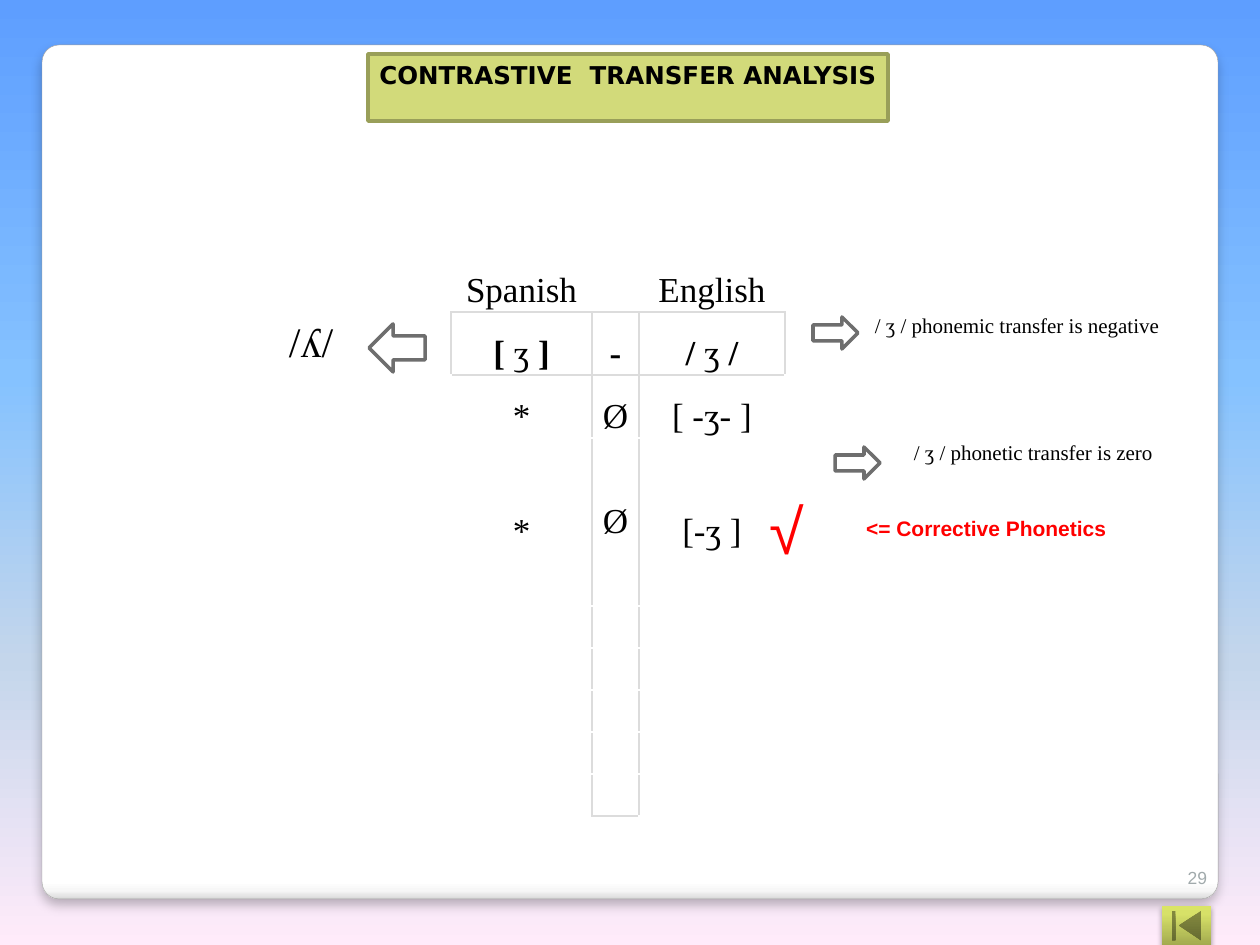
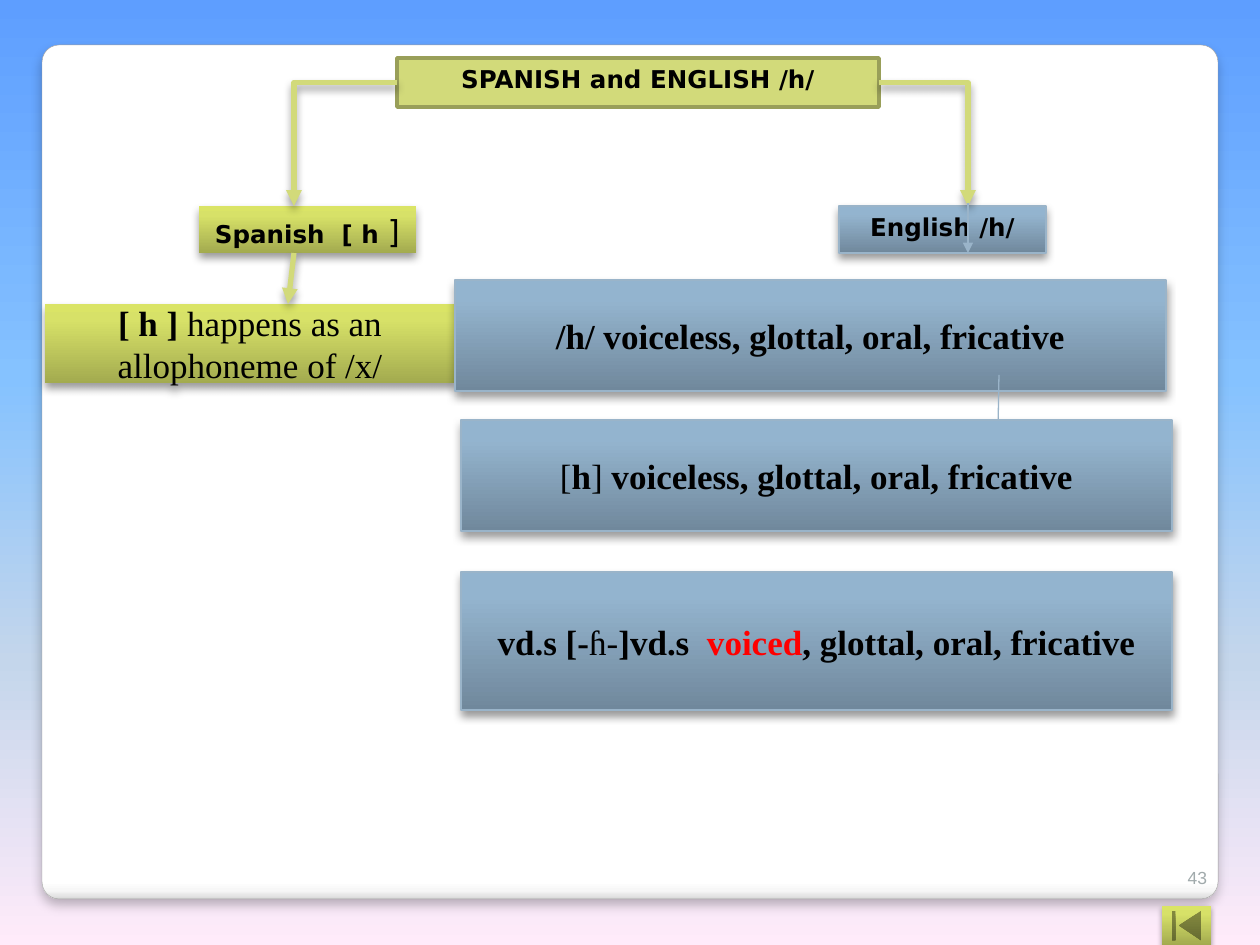
from dataclasses import dataclass
from lxml import etree
from pptx import Presentation
from pptx.dml.color import RGBColor
from pptx.enum.shapes import MSO_CONNECTOR, MSO_SHAPE
from pptx.enum.text import MSO_ANCHOR, MSO_AUTO_SIZE, PP_ALIGN
from pptx.oxml.ns import qn
from pptx.util import Pt

PX = 914400 / 126
RECT, ROUNDED = MSO_SHAPE.RECTANGLE, MSO_SHAPE.ROUNDED_RECTANGLE
RIGHT_ARROW, LEFT_ARROW = MSO_SHAPE.RIGHT_ARROW, MSO_SHAPE.LEFT_ARROW
HOME_BUTTON = MSO_SHAPE.ACTION_BUTTON_BEGINNING
STRAIGHT, ELBOW = MSO_CONNECTOR.STRAIGHT, MSO_CONNECTOR.ELBOW
TOP, MIDDLE, BOTTOM = MSO_ANCHOR.TOP, MSO_ANCHOR.MIDDLE, MSO_ANCHOR.BOTTOM
LEFT, CENTER, RIGHT = PP_ALIGN.LEFT, PP_ALIGN.CENTER, PP_ALIGN.RIGHT
NO_AUTOFIT = MSO_AUTO_SIZE.NONE
TITLE_ONLY = 5
LEFT_SIDE, RIGHT_SIDE = 1, 3


@dataclass(frozen=True)
class Theme:
    black: str = "000000"
    white: str = "FFFFFF"
    red: str = "FF0000"
    grid: str = "DCDCDC"
    arrow: str = "6E6E6E"
    panel_line: str = "A2A1A1"
    page: str = "A1AAAC"
    lime: str = "D2DA7A"
    olive: str = "999F59"
    steel: str = "9AB4C9"
    sky: tuple = ((0, "5E9EFF"), (40, "85C2FF"), (70, "C4D6EB"), (100, "FFEBFA"))
    paper: tuple = ((0, "FFFFFF"), (98, "FFFFFF"), (99, "F7F7F7"), (100, "D9D9D9"))
    lime_blend: tuple = ((0, "DAE466"), (20, "D7E168"), (100, "A3AB4F"))
    steel_blend: tuple = ((0, "93B4CF"), (20, "93B3CD"), (100, "70889C"))
    panel_shadow: tuple = (25, 6, 4)
    box_shadow: tuple = (40, 5, 3)
    button_shadow: tuple = (35, 3, 1.8)

    def font(self, role):
        name, size, bold = {
            "heading": ("DejaVu Sans", 14, True),
            "body": ("Times New Roman", 20, False),
            "strong": ("Times New Roman", 20, True),
            "note": ("Times New Roman", 12, False),
            "phoneme": ("Times New Roman", 24, False),
            "remark": ("Arial", 12, True),
            "tick": ("Arial", 36, False),
            "page": ("Arial", 10, False),
        }[role]
        return {"name": name, "size": Pt(size), "bold": bold}


def px(*lengths):
    return [round(length * PX) for length in lengths]


def assign(target, values):
    for key, value in values.items():
        setattr(target, key, value)


def color_node(parent, color):
    return etree.SubElement(parent, qn("a:srgbClr"), val=color)


class Deck:
    def __init__(self, theme):
        self.theme = theme
        self.prs = Presentation()
        self.prs.slide_width, self.prs.slide_height = px(1260, 945)
        self.layout = self.prs.slide_layouts[TITLE_ONLY]
        self.blend(self.layout.background.fill, self.layout.element, theme.sky)
        self.slide = None

    def blend(self, fill, owner, stops):
        fill.gradient()
        fill.gradient_angle = 270
        stop_list = next(owner.iter(qn("a:gsLst")))
        for stop in list(stop_list):
            stop_list.remove(stop)
        for position, color in stops:
            color_node(etree.SubElement(stop_list, qn("a:gs"), pos=str(position * 1000)), color)

    def cast_shadow(self, properties, shadow):
        effects = properties.find(qn("a:effectLst"))
        if effects is None:
            effects = etree.SubElement(properties, qn("a:effectLst"))
        if shadow:
            alpha, blur, distance = shadow
            outer = etree.SubElement(effects, qn("a:outerShdw"), blurRad=str(Pt(blur)),
                                     dist=str(Pt(distance)), dir="5400000", rotWithShape="0")
            etree.SubElement(color_node(outer, self.theme.black), qn("a:alpha"), val=str(alpha * 1000))

    def paint(self, shape, fill, line=None, width=1, shadow=None):
        if isinstance(fill, tuple):
            self.blend(shape.fill, shape.element.spPr, fill)
        else:
            shape.fill.solid()
            shape.fill.fore_color.rgb = RGBColor.from_string(fill)
        if line:
            shape.line.color.rgb = RGBColor.from_string(line)
            shape.line.width = Pt(width)
        else:
            shape.line.fill.background()
        shape.shadow.inherit = False
        self.cast_shadow(shape.element.spPr, shadow)

    def set_runs(self, frame, runs, role, align=LEFT, spacing=None):
        paragraph = frame.paragraphs[0]
        assign(paragraph, {"alignment": align, "line_spacing": spacing})
        for content, changes in [(runs, {})] if isinstance(runs, str) else runs:
            run = paragraph.add_run()
            run.text = content
            values = {**self.theme.font(role), **changes}
            color = values.pop("color", self.theme.black)
            assign(run.font, values)
            run.font.color.rgb = RGBColor.from_string(color)

    def frame(self, shape, anchor=TOP, wrap=True):
        inset, = px(6)
        assign(shape.text_frame, {
            "word_wrap": wrap, "auto_size": NO_AUTOFIT, "vertical_anchor": anchor,
            "margin_left": inset, "margin_right": inset, "margin_top": inset, "margin_bottom": inset})
        return shape.text_frame

    def shape(self, kind, box, fill, **look):
        drawn = self.slide.shapes.add_shape(kind, *px(*box))
        self.paint(drawn, fill, **look)
        return drawn

    def box(self, box, fill, runs, role, anchor=MIDDLE, line=None):
        drawn = self.shape(RECT, box, fill, line=line, width=0.75, shadow=self.theme.box_shadow)
        self.set_runs(self.frame(drawn, anchor), runs, role, CENTER)

    def text(self, box, runs, role, align=LEFT, anchor=TOP, wrap=True):
        drawn = self.slide.shapes.add_textbox(*px(*box))
        self.set_runs(self.frame(drawn, anchor, wrap), runs, role, align)

    def block_arrow(self, kind, box):
        self.shape(kind, box, self.theme.white, line=self.theme.arrow, width=2)

    def connector(self, kind, start, end, color, width, shadow=None, source=None, side=None):
        link = self.slide.shapes.add_connector(kind, *px(*start, *end))
        if source is not None:
            link.begin_connect(source, side)
        link.line.color.rgb = RGBColor.from_string(color)
        link.line.width = Pt(width)
        properties = link.element.spPr
        if kind == ELBOW:
            properties.find(qn("a:prstGeom")).set("prst", "bentConnector2")
        etree.SubElement(properties.find(qn("a:ln")), qn("a:tailEnd"), type="triangle")
        self.cast_shadow(properties, shadow)

    def start_slide(self, heading, box, page):
        theme = self.theme
        self.slide = self.prs.slides.add_slide(self.layout)
        title = self.slide.shapes.title
        panel = self.shape(ROUNDED, (42, 45, 1176, 854), theme.paper, line=theme.panel_line,
                           width=0.25, shadow=theme.panel_shadow)
        panel.adjustments[0] = 0.02
        title.element.addprevious(panel.element)
        assign(title, dict(zip(("left", "top", "width", "height"), px(*box))))
        self.paint(title, theme.lime, line=theme.olive, width=2)
        self.set_runs(self.frame(title), heading, "heading", CENTER)
        self.shape(HOME_BUTTON, (1162, 906, 49, 39), theme.lime_blend, shadow=theme.button_shadow)
        self.text((1150, 862, 63, 32), [(page, {"color": theme.page})], "page", RIGHT, BOTTOM)
        return title

    def table(self, origin, widths, heights, contents, border_color):
        box = (*origin, sum(widths), sum(heights))
        table = self.slide.shapes.add_table(len(heights), len(widths), *px(*box)).table
        assign(table, {"first_row": False, "horz_banding": False})
        for column, width in zip(table.columns, px(*widths)):
            column.width = width
        for row, height in zip(table.rows, px(*heights)):
            row.height = height
        side_inset, = px(9)
        for r in range(len(heights)):
            for c in range(len(widths)):
                cell = table.cell(r, c)
                assign(cell, {"margin_left": side_inset, "margin_right": side_inset, "margin_top": 0,
                              "margin_bottom": 0, "vertical_anchor": MIDDLE})
                for side in "LRTB":
                    edge = etree.SubElement(cell._tc.get_or_add_tcPr(), qn(f"a:ln{side}"), w=str(Pt(1)))
                    color_node(etree.SubElement(edge, qn("a:solidFill")), border_color(r, c, side))
                cell.fill.background()
                if (r, c) in contents:
                    runs, spacing = contents[r, c]
                    self.set_runs(cell.text_frame, runs, "body", CENTER, spacing)


def transfer_slide(deck):
    theme = deck.theme
    bold = {"bold": True}
    deck.start_slide("CONTRASTIVE  TRANSFER ANALYSIS", (368, 54, 520, 67), "29")
    for note_box, arrow_box, note in [
        ((869, 307, 302, 38), (813, 317, 45, 32), "/ ʒ / phonemic transfer is negative"),
        ((908, 434, 302, 38), (835, 447, 45, 32), "/ ʒ / phonetic transfer is zero"),
    ]:
        deck.text(note_box, note, "note")
        deck.block_arrow(RIGHT_ARROW, arrow_box)

    heights = [42, 63, 63, 168] + [42] * 5
    last_row = len(heights) - 1

    def border_color(row, column, side):
        shown = row == 1 or (row == 0 and side == "B")
        if row > 1:
            shown = {"L": column > 0, "R": column < 2, "T": row == 2,
                     "B": column == 1 and row == last_row}[side]
        return theme.grid if shown else theme.white

    comparison = {
        (0, 0): ("Spanish", 1.0),
        (0, 2): ("English", 1.0),
        (1, 0): ([("[ ", bold), ("ʒ ", {}), ("]", bold)], 1.5),
        (1, 1): ([("-", bold)], 1.5),
        (1, 2): ([("/ ", bold), ("ʒ", {}), (" /", bold)], 1.5),
        (2, 0): ("*", 1.5),
        (2, 1): ("Ø", 1.5),
        (2, 2): ("[ -ʒ- ]", 1.5),
        (3, 0): ("*", 1.5),
        (3, 1): ("Ø", 1.0),
        (3, 2): ("[-ʒ ]", 1.5),
    }
    deck.table((451, 270), (141, 47, 146), heights, comparison, border_color)
    deck.text((283, 310, 74, 63), "/ʎ/", "phoneme", wrap=False)
    deck.block_arrow(LEFT_ARROW, (369, 324, 56, 48))
    deck.text((764, 486, 72, 90), [("√", {"color": theme.red})], "tick")
    deck.text((860, 510, 256, 38), [("<= Corrective Phonetics", {"color": theme.red})],
              "remark", wrap=False)


def h_slide(deck):
    theme = deck.theme
    plain = {"bold": False}
    lime, steel = theme.lime_blend, theme.steel_blend
    title = deck.start_slide("SPANISH and ENGLISH /h/", (397, 58, 482, 49), "43")
    deck.box((199, 206, 217, 47), lime, [("Spanish  [ h ", {}), ("]", {"size": Pt(18), **plain})],
             "heading", TOP)
    deck.box((839, 206, 207, 47), steel, "English /h/", "heading", TOP, theme.steel)
    deck.box((45, 304, 410, 79), lime, [("[ h ] ", {}), ("happens as an allophoneme of /x/", plain)],
             "strong")
    features = "voiceless, glottal, oral, fricative"
    deck.box((455, 280, 711, 111), steel, f"/h/ {features}", "strong", line=theme.steel)

    branch = {"color": theme.lime, "width": 3, "shadow": theme.box_shadow}
    hairline = {"color": theme.steel, "width": 0.75}
    deck.connector(ELBOW, (397, 83), (294, 206), source=title, side=LEFT_SIDE, **branch)
    deck.connector(STRAIGHT, (294, 253), (288, 304), **branch)
    deck.connector(ELBOW, (879, 83), (968, 206), source=title, side=RIGHT_SIDE, **branch)
    deck.connector(STRAIGHT, (968, 203), (968, 253), **hairline)
    deck.connector(STRAIGHT, (999, 375), (998, 430), **hairline)

    voiceless = [("[", plain), ("h", {}), ("] ", plain), (features, {})]
    voiced = [("vd.s [-", {}), ("ɦ-", plain), ("]vd.s  ", {}), ("voiced", {"color": theme.red}),
              (", glottal, oral, fricative", {})]
    for top, height, allophone in [(420, 111, voiceless), (572, 138, voiced)]:
        deck.box((461, top, 711, height), steel, allophone, "strong", line=theme.steel)


def main():
    deck = Deck(Theme())
    transfer_slide(deck)
    h_slide(deck)
    deck.prs.save("out.pptx")


if __name__ == "__main__":
    main()
